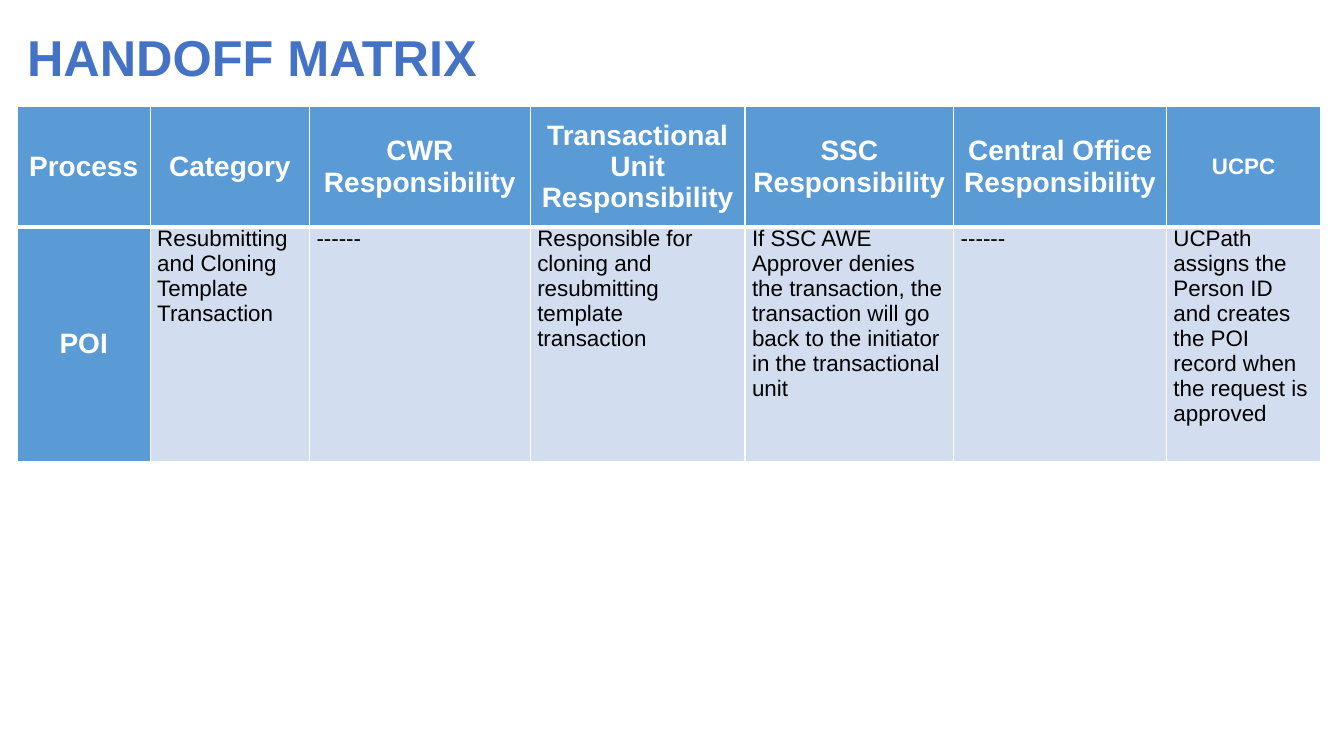
import dataclasses

import pptx
import pptx.dml.color
import pptx.enum.text
import pptx.oxml
import pptx.oxml.ns
import pptx.util

Inches = pptx.util.Inches
Align = pptx.enum.text.PP_ALIGN
Anchor = pptx.enum.text.MSO_ANCHOR


@dataclasses.dataclass(frozen=True)
class Theme:
    font: str = "Arial"
    title_color: str = "4472C4"
    header_fill: str = "5B9BD5"
    body_fill: str = "D2DEEF"
    light: str = "FFFFFF"
    dark: str = "000000"
    title_size: int = 36
    header_size: int = 20
    body_size: int = 16
    thin_border: int = 1
    thick_border: int = 3


THEME = Theme()

COLUMN_WIDTHS = [1.32, 1.58, 2.19, 2.13, 2.07, 2.11, 1.53]
ROW_HEIGHTS = [1.19, 2.33]
MATRIX = [
    ["Process", "Category", "CWR Responsibility",
     "Transactional Unit Responsibility", "SSC Responsibility",
     "Central Office Responsibility", "UCPC"],
    ["POI", "Resubmitting and Cloning Template Transaction", "------",
     "Responsible for cloning and resubmitting template transaction",
     "If SSC AWE Approver denies the transaction, the transaction will go "
     "back to the initiator in the transactional unit",
     "------",
     "UCPath assigns the Person ID and creates the POI record when the "
     "request is approved"],
]


def rgb(color):
    return pptx.dml.color.RGBColor.from_string(color)


def write_text(text_frame, text, size, color, bold=False, align=Align.LEFT):
    """Put one formatted paragraph into a text frame."""
    text_frame.word_wrap = True
    paragraph = text_frame.paragraphs[0]
    paragraph.alignment = align
    run = paragraph.add_run()
    run.text = text
    run.font.name = THEME.font
    run.font.size = pptx.util.Pt(size)
    run.font.bold = bold
    run.font.color.rgb = rgb(color)


def set_borders(cell, **widths):
    """Draw light cell borders; borders must precede the fill in the XML."""
    properties = cell._tc.get_or_add_tcPr()
    for position, side in enumerate(("lnL", "lnR", "lnT", "lnB")):
        width = pptx.util.Pt(widths.get(side, THEME.thin_border))
        border = pptx.oxml.parse_xml(
            f'<a:{side} {pptx.oxml.ns.nsdecls("a")} w="{width}">'
            f'<a:solidFill><a:srgbClr val="{THEME.light}"/></a:solidFill>'
            f'</a:{side}>')
        properties.insert(position, border)


def add_title(slide, left, top, width, height):
    shape = slide.shapes.add_textbox(
        Inches(left), Inches(top), Inches(width), Inches(height))
    shape.text_frame.vertical_anchor = Anchor.MIDDLE
    write_text(shape.text_frame, "HANDOFF MATRIX", size=THEME.title_size,
               color=THEME.title_color, bold=True)


def fill_cell(cell, text, row, column):
    is_header = row == 0 or column == 0
    cell.margin_left = cell.margin_right = Inches(0.07)
    cell.margin_top = cell.margin_bottom = 0
    cell.fill.solid()
    cell.fill.fore_color.rgb = rgb(
        THEME.header_fill if is_header else THEME.body_fill)
    # The edge under the header row is thicker
    header_edge = "lnB" if row == 0 else "lnT"
    set_borders(cell, **{header_edge: THEME.thick_border})
    if is_header:
        cell.vertical_anchor = Anchor.MIDDLE
        size = THEME.body_size if text == "UCPC" else THEME.header_size
        write_text(cell.text_frame, text, size=size, color=THEME.light,
                   bold=True, align=Align.CENTER)
    else:
        cell.vertical_anchor = Anchor.TOP
        write_text(cell.text_frame, text, size=THEME.body_size,
                   color=THEME.dark)


def add_matrix(slide, left, top, width, height):
    table = slide.shapes.add_table(
        len(MATRIX), len(COLUMN_WIDTHS), Inches(left), Inches(top),
        Inches(width), Inches(height)).table
    for column, column_width in zip(table.columns, COLUMN_WIDTHS):
        column.width = Inches(column_width)
    for row, row_height in zip(table.rows, ROW_HEIGHTS):
        row.height = Inches(row_height)
    for row, texts in enumerate(MATRIX):
        for column, text in enumerate(texts):
            fill_cell(table.cell(row, column), text, row, column)


def main():
    presentation = pptx.Presentation()
    presentation.slide_width = Inches(13.33)
    presentation.slide_height = Inches(7.5)
    slide = presentation.slides.add_slide(presentation.slide_layouts[6])

    # Heading
    add_title(slide, 0.17, 0.18, 11.64, 0.75)
    # Responsibilities by process
    add_matrix(slide, 0.17, 1.06, sum(COLUMN_WIDTHS), sum(ROW_HEIGHTS))

    presentation.save("out.pptx")


if __name__ == "__main__":
    main()
